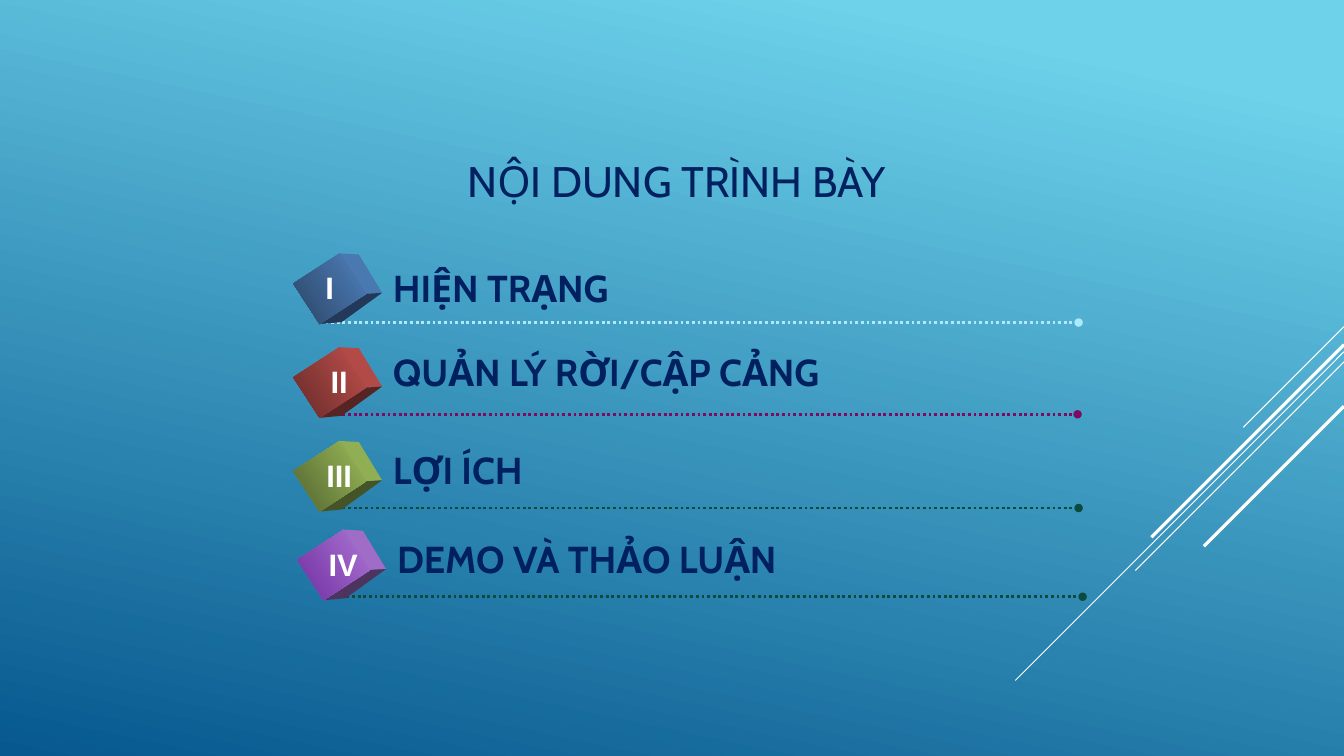
import pptx
import pptx.dml.color
import pptx.enum.dml
import pptx.enum.shapes
import pptx.enum.text
import pptx.oxml
import pptx.oxml.ns
import pptx.util

COLUMNS, ROWS = 133.33, 75
COLORS = {
    "sky": "6ED2EB", "deep": "06588E", "navy": "002060", "white": "FFFFFF",
    "pale": "ADE9F8", "plum": "7C0B61", "forest": "0A4B3E",
}
CUBES = {
    "blue": {"light": "4F81BD", "dark": "2B4566", "side": "4A78B0", "base": "24385A"},
    "red": {"light": "C0504D", "dark": "672B29", "side": "B24A47", "base": "552423"},
    "green": {"light": "9BBB59", "dark": "536430", "side": "90AE53", "base": "455328"},
    "purple": {"light": "AC75D5", "dark": "7030A0", "side": "9F6CC6", "base": "4D345F"},
}
AGENDA = [
    {"numeral": "I", "heading": "HIỆN TRẠNG", "cube": "blue", "rule": "pale",
     "box": (30.3, 25.9, 74.7, 6.1), "numeral_width": 3.6, "heading_rise": 0.1},
    {"numeral": "II", "heading": "QUẢN LÝ RỜI/CẬP CẢNG", "cube": "red", "rule": "plum",
     "box": (30.3, 35.2, 74.6, 5.9), "numeral_width": 5.5, "heading_rise": 1.1},
    {"numeral": "III", "heading": "LỢI ÍCH", "cube": "green", "rule": "forest",
     "box": (30.3, 44.5, 74.7, 5.9), "numeral_width": 5.5, "heading_rise": 0.6},
    {"numeral": "IV", "heading": "DEMO VÀ THẢO LUẬN", "cube": "purple", "rule": "forest",
     "box": (30.7, 53.3, 74.7, 5.9), "numeral_width": 5.5, "heading_rise": 0.6},
]
RAYS = [(32.4, 10, 0.75), (34.9, 32.6, 0.75), (35.9, 20.7, 0.75), (34.2, 19.1, 2.25), (40.3, 13.9, 2.25)]


def cells(count):
    """Turn a count of grid cells, ten to the inch, into a length."""
    return pptx.util.Inches(count / 10)


def rgb(code):
    """Turn a hex string into a colour."""
    return pptx.dml.color.RGBColor.from_string(code)


def fill_gradient(fill, stops, angle):
    """Fill with two (position, hex) stops at a counterclockwise angle."""
    fill.gradient()
    fill.gradient_angle = angle
    for stop, (position, code) in zip(fill.gradient_stops, stops):
        stop.position = position
        stop.color.rgb = rgb(code)


def write(frame, text, size, color, font, bold=False, align="LEFT", anchor="TOP", grow=True):
    """Put one formatted paragraph into a text frame."""
    sizing = pptx.enum.text.MSO_AUTO_SIZE
    frame.word_wrap = True
    frame.auto_size = sizing.SHAPE_TO_FIT_TEXT if grow else sizing.NONE
    frame.vertical_anchor = getattr(pptx.enum.text.MSO_ANCHOR, anchor)
    paragraph = frame.paragraphs[0]
    paragraph.alignment = getattr(pptx.enum.text.PP_ALIGN, align)
    run = paragraph.add_run()
    run.text = text
    run.font.size = pptx.util.Pt(size)
    run.font.name = font
    run.font.bold = bold
    run.font.color.rgb = rgb(color)


def add_label(slide, box, text, **style):
    """Add a text box at a grid box."""
    label = slide.shapes.add_textbox(*map(cells, box))
    write(label.text_frame, text, **style)


def add_line(slide, start, end, color, width, dotted=False):
    """Draw a straight line; a dotted one ends in a round dot."""
    line = slide.shapes.add_connector(
        pptx.enum.shapes.MSO_CONNECTOR.STRAIGHT, *map(cells, (*start, *end)))
    line.line.color.rgb = rgb(color)
    line.line.width = pptx.util.Pt(width)
    if dotted:
        line.line.dash_style = pptx.enum.dml.MSO_LINE.ROUND_DOT
        tail = pptx.oxml.parse_xml(
            '<a:tailEnd %s type="oval"/>' % pptx.oxml.ns.nsdecls("a"))
        line.line._get_or_add_ln().append(tail)
    line._element.spPr.append(
        pptx.oxml.parse_xml("<a:effectLst %s/>" % pptx.oxml.ns.nsdecls("a")))


def add_cube(slide, left, top, tones):
    """Draw a tilted cube from its front, its right side and its base."""
    width, height = 4.8, 5.5
    center_x, center_y = left + width / 2, top + height / 2
    faces = {
        "side": [(1, -3.5), (2.9, -3.4), (5.2, 0.4), (3.6, 0.5)],
        "base": [(-1, 3.5), (3.6, 0.5), (5.2, 0.4), (1.2, 3.3)],
    }
    for tone, corners in faces.items():
        points = [(cells(center_x + x), cells(center_y + y)) for x, y in corners]
        builder = slide.shapes.build_freeform(*points[0])
        builder.add_line_segments(points[1:], close=True)
        face = builder.convert_to_shape()
        face.shadow.inherit = False
        face.fill.solid()
        face.fill.fore_color.rgb = rgb(tones[tone])
        face.line.fill.background()
    front = slide.shapes.add_shape(
        pptx.enum.shapes.MSO_SHAPE.RECTANGLE, *map(cells, (left, top, width, height)))
    front.rotation = 57
    front.shadow.inherit = False
    front.line.fill.background()
    fill_gradient(front.fill, [(0, tones["light"]), (1, tones["dark"])], 270)


def add_agenda_row(slide, box, item):
    """Place one agenda entry: dotted rule, cube, numeral and heading."""
    left, top, width, height = box
    rule_y = top + height
    add_line(slide, (left + 2, rule_y), (left + 2 + width, rule_y),
             COLORS[item["rule"]], 2, dotted=True)
    add_cube(slide, left, top, CUBES[item["cube"]])
    add_label(slide, (left + 0.6, top + 0.3, item["numeral_width"], 4.7), item["numeral"],
              size=22.1, color=COLORS["white"], font="Arial", bold=True, align="CENTER")
    add_label(slide, (left + 7.7, top - item["heading_rise"], 68.2, 5.5), item["heading"],
              size=26.8, color=COLORS["navy"], font="Cabin", bold=True)


def add_title(slide, box):
    """Move the title placeholder to its box and write the title."""
    title = slide.shapes.title
    title.left, title.top, title.width, title.height = map(cells, box)
    write(title.text_frame, "NỘI DUNG TRÌNH BÀY", size=30.5, color=COLORS["navy"],
          font="Cabin", align="CENTER", anchor="MIDDLE", grow=False)


def add_rays(slide, right):
    """Draw the diagonal rays that run down from the right edge."""
    for top, reach, width in RAYS:
        add_line(slide, (right, top), (right - reach, top + reach), COLORS["white"], width)


def main():
    """Build and save the agenda slide."""
    deck = pptx.Presentation()
    deck.slide_width, deck.slide_height = cells(COLUMNS), cells(ROWS)
    slide = deck.slides.add_slide(deck.slide_layouts[5])
    fill_gradient(slide.background.fill,
                  [(0.1, COLORS["sky"]), (1, COLORS["deep"])], 258)
    add_rays(slide, COLUMNS)
    add_title(slide, (39.9, 14.2, 54.4, 7.4))
    for item in AGENDA:
        add_agenda_row(slide, item["box"], item)
    deck.save("out.pptx")


if __name__ == "__main__":
    main()
